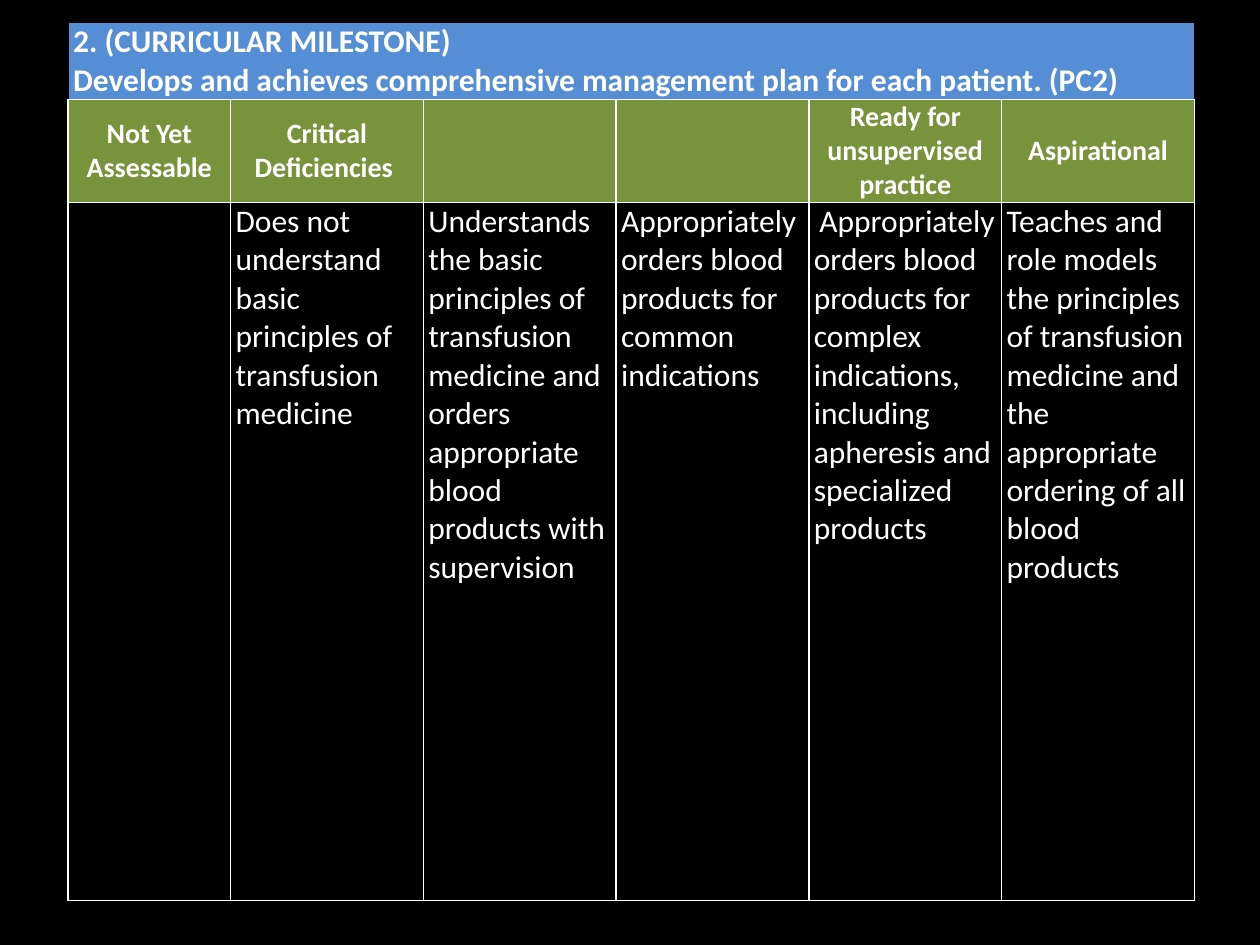
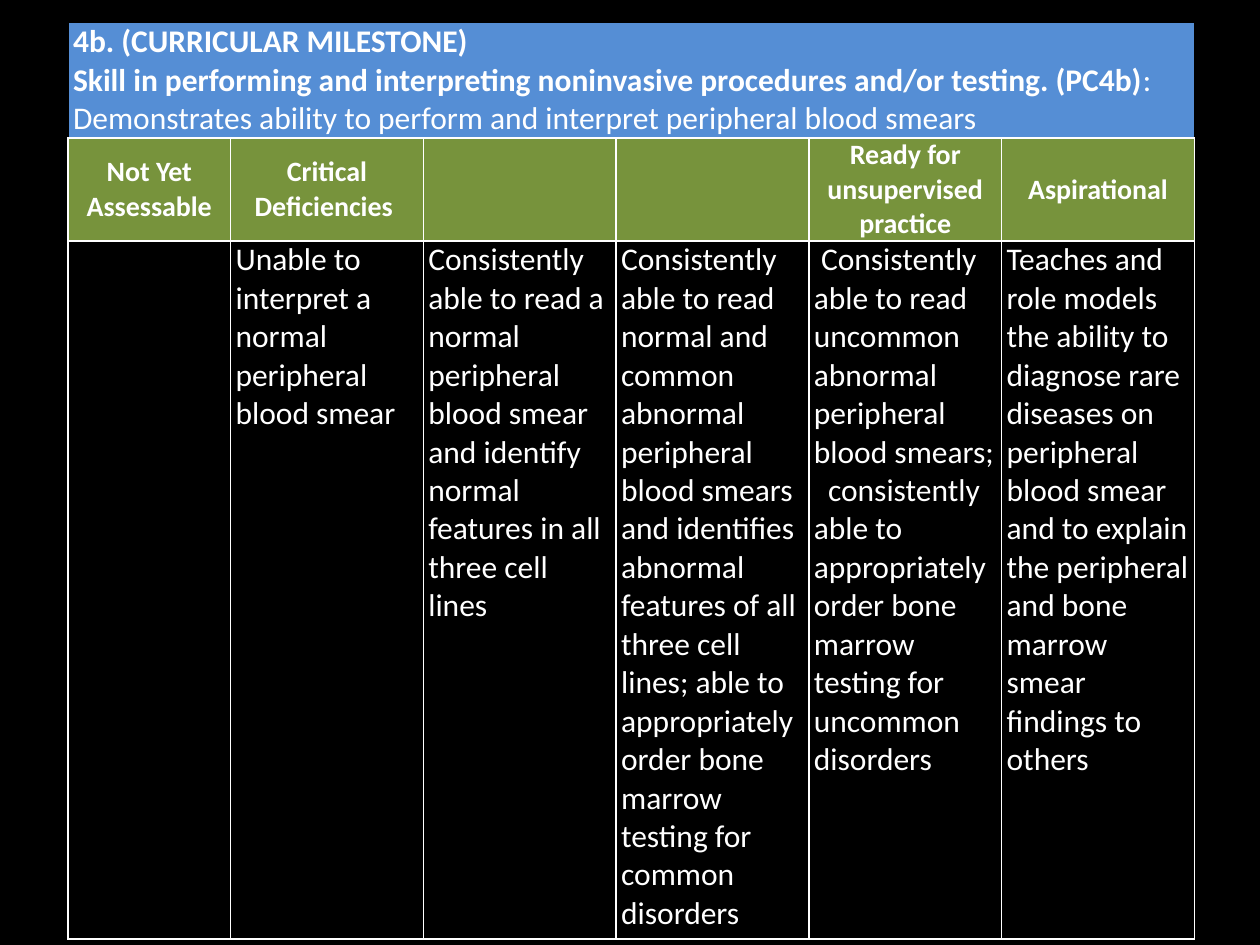
"""Build two milestone rubric slides, each one table on black."""
from lxml.etree import SubElement
from pptx import Presentation
from pptx.dml.color import RGBColor
from pptx.enum.text import MSO_ANCHOR as Anchor, PP_ALIGN as Align
from pptx.oxml.ns import qn
from pptx.util import Inches, Pt

COLORS = {"page": "000000", "text": "FFFFFF", "grid": "FFFFFF",
          "banner": "558ED5", "header": "77933C"}
FONT = "Calibri"
COLUMN_WIDTHS = [1.29] + [1.53] * 5
HEADER_HEIGHT, BODY_HEIGHT = 0.8, 5.54
LEVELS = ["Not Yet Assessable", "Critical Deficiencies ", "", "",
          "Ready for unsupervised practice", "Aspirational"]

MILESTONES = [
    {
        "banner_height": 0.6,
        "banner": [
            [("2. (CURRICULAR MILESTONE)", 18, True)],
            [("Develops and achieves comprehensive management plan for each patient. (PC2)", 18, True)],
        ],
        "body": [
            [],
            [("Does not understand basic principles of transfusion medicine", 18, False)],
            [("Understands the basic principles of transfusion medicine and orders "
              "appropriate blood products with supervision", 18, False)],
            [("Appropriately orders blood products for common indications", 18, False)],
            [(" ", 14, True),
             ("Appropriately orders blood products for complex indications, "
              "including apheresis and specialized products", 18, False),
             (" ", 14, False)],
            [("Teaches and role models the principles of transfusion medicine and "
              "the appropriate ordering of all blood products", 18, False),
             (" ", 14, False)],
        ],
    },
    {
        "banner_height": 0.9,
        "banner": [
            [("4b. (CURRICULAR MILESTONE)", 18, True)],
            [("Skill in performing and interpreting noninvasive procedures and/or testing. (PC4b)", 18, True),
             (": Demonstrates ability to perform and interpret peripheral blood smears", 18, False)],
        ],
        "body": [
            [],
            [("Unable to interpret a normal peripheral blood smear", 18, False)],
            [("Consistently able to read a normal peripheral blood smear and identify "
              "normal features in all three cell lines", 18, False)],
            [("Consistently able to read normal and common abnormal peripheral blood "
              "smears and identifies abnormal features of all three cell lines; able to "
              "appropriately order bone marrow testing for common disorders", 18, False)],
            [(" ", 18, True),
             ("Consistently able to read uncommon abnormal peripheral blood smears;  "
              " consistently able to appropriately order bone marrow testing for "
              "uncommon disorders", 18, False)],
            [("Teaches and role models the ability to diagnose rare diseases on "
              "peripheral blood smear and to explain the peripheral and bone marrow "
              "smear findings to others", 18, False)],
        ],
    },
]


def style_cell(cell, fill, edges):
    """Set margins, fill and the left, right, top and bottom borders."""
    cell.margin_left = cell.margin_right = Inches(0.04)
    cell.margin_top = cell.margin_bottom = 0
    properties = cell._tc.get_or_add_tcPr()
    for side, edge in zip("LRTB", edges):
        line = SubElement(properties, qn(f"a:ln{side}"), w=str(Pt(1)))
        solid = SubElement(line, qn("a:solidFill"))
        SubElement(solid, qn("a:srgbClr"), val=COLORS[edge])
    if fill:
        cell.fill.solid()
        cell.fill.fore_color.rgb = RGBColor.from_string(COLORS[fill])
    else:
        cell.fill.background()


def write_cell(cell, paragraphs, align=Align.LEFT):
    """Fill a cell with paragraphs made of (text, size, bold) spans."""
    for index, spans in enumerate(paragraphs):
        para = cell.text_frame.paragraphs[0] if index == 0 else cell.text_frame.add_paragraph()
        para.alignment = align
        for text, size, bold in spans:
            span = para.add_run()
            span.text = text
            span.font.name = FONT
            span.font.size = Pt(size)
            span.font.bold = bold
            span.font.color.rgb = RGBColor.from_string(COLORS["text"])


deck = Presentation()
deck.slide_width, deck.slide_height = Inches(10), Inches(7.5)

for milestone in MILESTONES:
    page = deck.slides.add_slide(deck.slide_layouts[6])
    page.background.fill.solid()
    page.background.fill.fore_color.rgb = RGBColor.from_string(COLORS["page"])

    heights = [milestone["banner_height"], HEADER_HEIGHT, BODY_HEIGHT]
    frame = page.shapes.add_table(3, len(COLUMN_WIDTHS), Inches(0.54), Inches(0.18),
                                  Inches(sum(COLUMN_WIDTHS)), Inches(sum(heights)))
    table = frame.table
    table.first_row = table.horz_banding = False
    for column, width in zip(table.columns, COLUMN_WIDTHS):
        column.width = Inches(width)
    for row, height in zip(table.rows, heights):
        row.height = Inches(height)

    for column in range(len(COLUMN_WIDTHS)):
        style_cell(table.cell(0, column), "banner", ["page", "page", "page", "grid"])
        style_cell(table.cell(1, column), "header", ["grid"] * 4)
        style_cell(table.cell(2, column), None, ["grid"] * 4)

    table.cell(0, 0).merge(table.cell(0, len(COLUMN_WIDTHS) - 1))
    write_cell(table.cell(0, 0), milestone["banner"])
    for column, (level, spans) in enumerate(zip(LEVELS, milestone["body"])):
        if level:
            header = table.cell(1, column)
            header.vertical_anchor = Anchor.MIDDLE
            write_cell(header, [[(level, 16, True)]], Align.CENTER)
        if spans:
            write_cell(table.cell(2, column), [spans])

deck.save("out.pptx")
